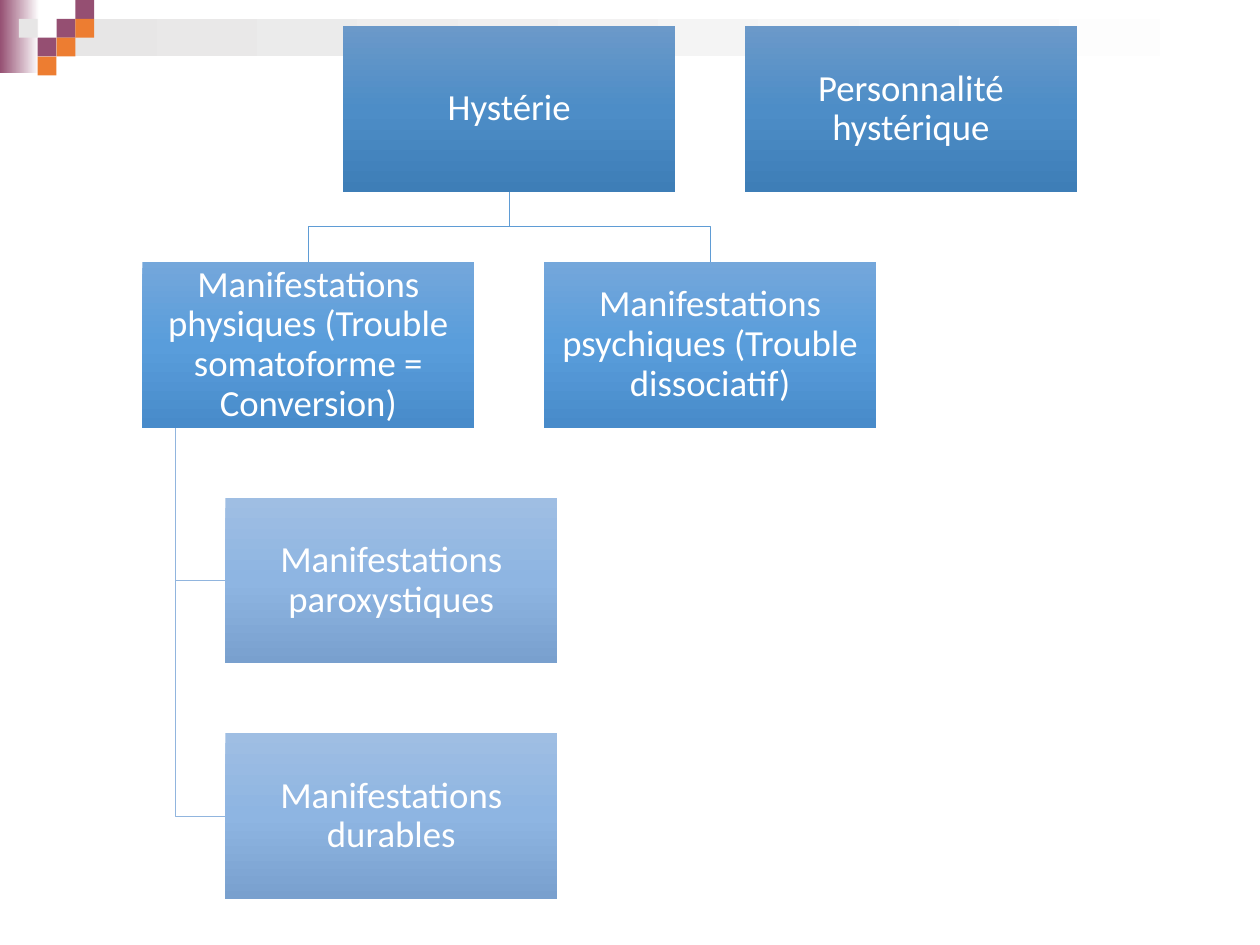
from lxml import etree
from pptx import Presentation
from pptx import util as u
from pptx.dml.color import RGBColor
from pptx.enum import shapes, text
from pptx.oxml.ns import qn

PLUM, ORANGE, GREY, WHITE = "954F72", "ED7D31", "E7E6E6", "FFFFFF"
DARK = ("6B99C9", "4D8DC7", "3E7EB7")
MID = ("74A7DB", "599DDB", "488BCA")
LIGHT = ("9FBEE3", "8EB5E2", "79A0CE")

# Box size, then the half-column and row grid, in cm
WIDE, HIGH = 6.69, 3.34
LEFT, TOP = 2.87, 0.53
COL, ROW = 4.05, 4.75
CELL = 0.38


def tint(code):
    return RGBColor.from_string(code)


def apply(item, style):
    for name, value in style.items():
        setattr(item, name, value)


class Board:
    frame = dict(word_wrap=True, vertical_anchor=text.MSO_ANCHOR.MIDDLE,
                 **{f"margin_{side}": u.Cm(0.03)
                    for side in ("left", "right", "top", "bottom")})
    para = dict(alignment=text.PP_ALIGN.CENTER, line_spacing=0.9)
    font = dict(name="Calibri", size=u.Pt(21))

    def __init__(self, slide):
        self.slide = slide

    def rect(self, x, y, w, h, fills, angle=0):
        """Rectangle with one plain colour or an even gradient."""
        shape = self.slide.shapes.add_shape(
            shapes.MSO_SHAPE.RECTANGLE, u.Cm(x), u.Cm(y), u.Cm(w), u.Cm(h))
        shape.shadow.inherit = False
        shape.line.fill.background()
        if len(fills) == 1:
            shape.fill.solid()
            shape.fill.fore_color.rgb = tint(fills[0])
        else:
            self.blend(shape, fills, angle)
        return shape

    def blend(self, shape, fills, angle):
        shape.fill.gradient()
        shape.fill.gradient_angle = (360 - angle) % 360
        stops = next(shape._element.iter(qn("a:gsLst")))
        for old in list(stops):
            stops.remove(old)
        for i, code in enumerate(fills):
            place = str(100000 * i // (len(fills) - 1))
            stop = etree.SubElement(stops, qn("a:gs"), pos=place)
            etree.SubElement(stop, qn("a:srgbClr"), val=code)

    def box(self, x, y, words, fills):
        shape = self.rect(x, y, WIDE, HIGH, fills, 90)
        frame = shape.text_frame
        apply(frame, self.frame)
        para = frame.paragraphs[0]
        apply(para, self.para)
        run = para.add_run()
        run.text = words
        apply(run.font, self.font)
        run.font.color.rgb = tint(WHITE)

    def link(self, points, code):
        """Open bent line through the points."""
        spots = [(u.Cm(x), u.Cm(y)) for x, y in points]
        pen = self.slide.shapes.build_freeform(*spots[0])
        pen.add_line_segments(spots[1:], close=False)
        shape = pen.convert_to_shape()
        shape.shadow.inherit = False
        shape.fill.background()
        shape.line.color.rgb = tint(code)
        shape.line.width = u.Pt(0.5)


def main():
    deck = Presentation()
    deck.slide_width, deck.slide_height = u.Cm(25.4), u.Cm(19.05)
    board = Board(deck.slides.add_slide(deck.slide_layouts[6]))

    # Corner decoration: two fading bands and a stair of squares
    board.rect(0, 0, 0.79, 1.47, (PLUM, WHITE))
    board.rect(3 * CELL, CELL, 24.26, 0.76, (GREY, WHITE))
    squares = [(3, 1, PLUM), (4, 0, PLUM), (4, 1, ORANGE), (2, 2, PLUM),
               (1, 1, GREY), (3, 2, ORANGE), (2, 3, ORANGE)]
    for col, row, code in squares:
        board.rect(col * CELL, row * CELL, CELL, CELL, (code,))

    # Links from the root to its two branches
    root, base = LEFT + COL + WIDE / 2, TOP + HIGH
    bend = (base + TOP + ROW) / 2
    for end in (root + COL, root - COL):
        board.link([(root, base), (root, bend), (end, bend),
                    (end, TOP + ROW)], "5F9CD5")

    # Links from the left branch to its leaves
    stem, leaf = LEFT + WIDE / 10, LEFT + WIDE / 4
    for row in (3, 2):
        mid = TOP + row * ROW + HIGH / 2
        board.link([(stem, base + ROW), (stem, mid), (leaf, mid)], "91B5DE")

    # Boxes: left edge, row, words, colours
    boxes = [
        (LEFT + COL, 0, "Hystérie", DARK),
        (LEFT, 1, "Manifestations physiques (Trouble somatoforme = "
                  "Conversion)", MID),
        (leaf, 2, "Manifestations paroxystiques", LIGHT),
        (leaf, 3, "Manifestations durables", LIGHT),
        (LEFT + 2 * COL, 1, "Manifestations psychiques (Trouble dissociatif)",
         MID),
        (LEFT + 3 * COL, 0, "Personnalité hystérique", DARK),
    ]
    for x, row, words, fills in boxes:
        board.box(x, TOP + row * ROW, words, fills)

    deck.save("out.pptx")


if __name__ == "__main__":
    main()
